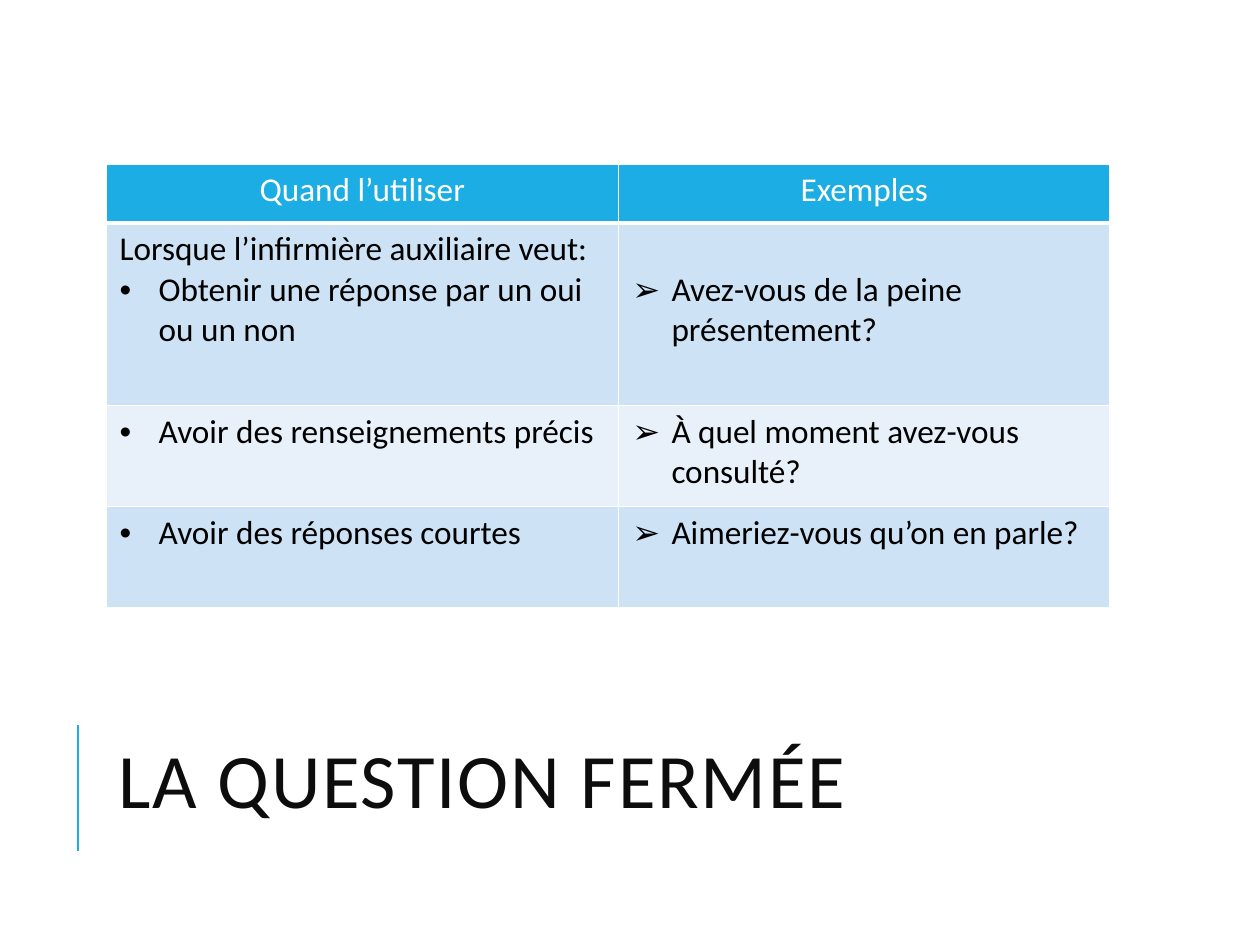
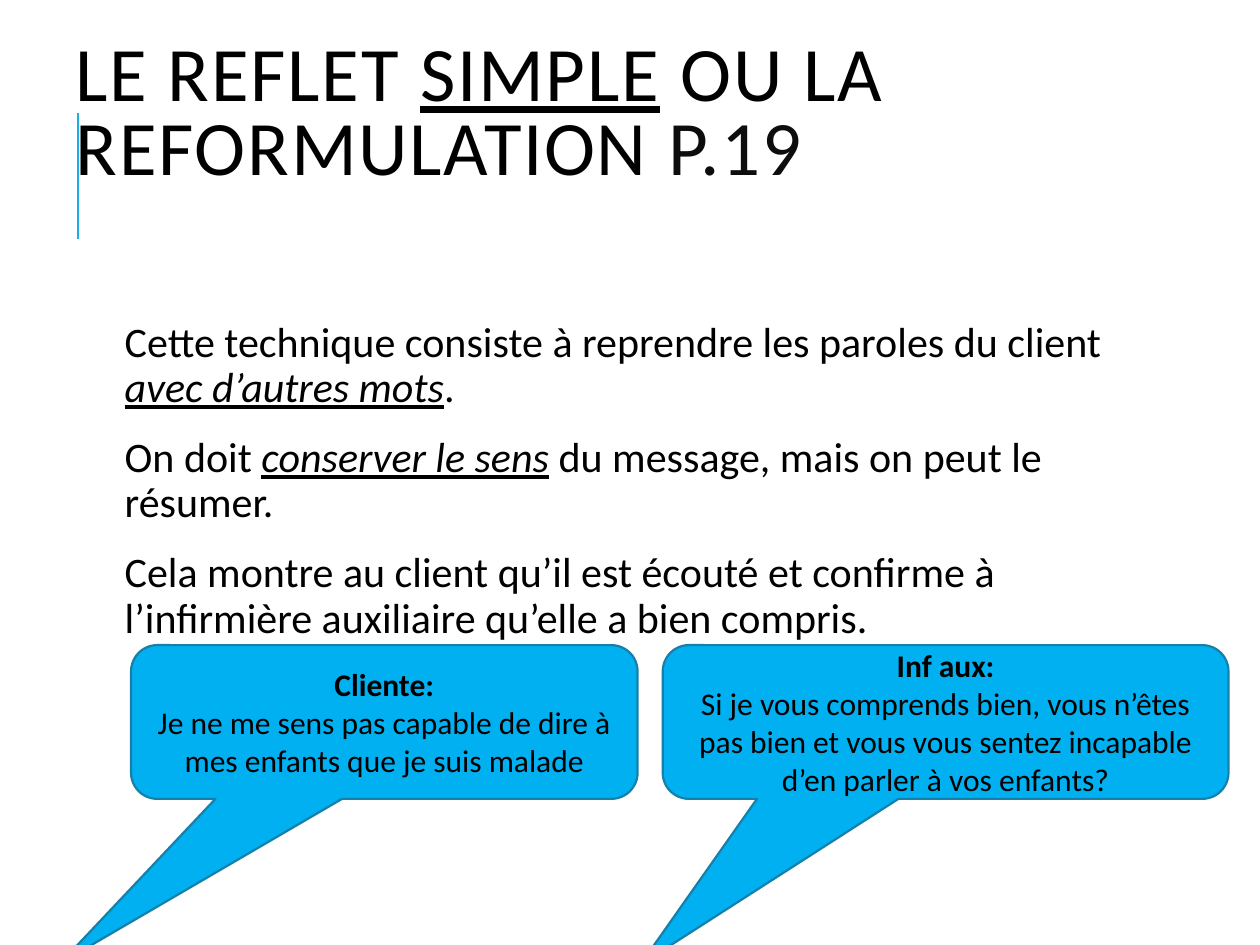
from lxml.etree import SubElement
from pptx import Presentation
from pptx.dml.color import RGBColor
from pptx.enum.shapes import MSO_CONNECTOR, MSO_SHAPE
from pptx.enum.text import MSO_ANCHOR, MSO_AUTO_SIZE, PP_ALIGN
from pptx.oxml.ns import qn
from pptx.util import Inches, Pt

COLORS = {
    "accent": "1CADE4", "title": "0D0D0D", "text": "000000", "white": "FFFFFF",
    "band_dark": "CDE3F5", "band_light": "E8F1FA",
    "bubble": "00B0F0", "bubble_edge": "1580A9",
}
FONT = "Calibri"
COLS, ROWS = 100, 75


def rgb(name):
    return RGBColor.from_string(COLORS[name])


class Deck:
    def __init__(self):
        self.prs = Presentation()
        self.prs.slide_width, self.prs.slide_height = Inches(10), Inches(7.5)
        self.s = None

    def x(self, cols):
        return round(self.prs.slide_width * cols / COLS)

    def y(self, rows):
        return round(self.prs.slide_height * rows / ROWS)

    def box(self, left, top, width, height):
        return self.x(left), self.y(top), self.x(width), self.y(height)

    def runs(self, p, parts, size, color="text", spacing=0):
        for text, marks, *own in parts:
            r = p.add_run()
            r.text = text
            f = r.font
            f.name, f.size = FONT, Pt(size)
            f.bold, f.italic, f.underline = (m in marks for m in "biu")
            f.color.rgb = rgb(own[0] if own else color)
            if spacing:
                r._r.get_or_add_rPr().set("spc", str(spacing))

    def paragraphs(self, tf, items):
        tf.word_wrap = True
        for i, parts in enumerate(items):
            p = tf.paragraphs[0] if i == 0 else tf.add_paragraph()
            yield p, parts

    def slide(self, parts, title_at, rail_top, color="text"):
        self.s = self.prs.slides.add_slide(self.prs.slide_layouts[5])
        self.rail(6.2, rail_top, 10)
        sp = self.s.shapes.title
        self.s.shapes._spTree.append(sp._element)
        sp.left, sp.top, sp.width, sp.height = self.box(*title_at)
        tf = sp.text_frame
        tf.word_wrap, tf.auto_size = True, MSO_AUTO_SIZE.NONE
        tf.vertical_anchor = MSO_ANCHOR.MIDDLE
        p = tf.paragraphs[0]
        p.alignment, p.line_spacing = PP_ALIGN.LEFT, 0.8
        self.runs(p, parts, 44, color, spacing=100)

    def rail(self, left, top, length):
        line = self.s.shapes.add_connector(
            MSO_CONNECTOR.STRAIGHT, self.x(left), self.y(top + length), self.x(left), self.y(top))
        line.line.color.rgb, line.line.width = rgb("accent"), Pt(1.5)
        SubElement(line._element.spPr, qn("a:effectLst"))

    def body(self, at, items):
        tf = self.s.shapes.add_textbox(*self.box(*at)).text_frame
        tf.margin_left = Inches(0.15)
        tf.margin_right = tf.margin_top = tf.margin_bottom = Inches(0.05)
        for p, parts in self.paragraphs(tf, items):
            p.line_spacing, p.space_before, p.space_after = 0.9, Pt(12), Pt(2)
            self.runs(p, parts, 24)

    def callout(self, at, tip, speaker, words):
        sp = self.s.shapes.add_shape(MSO_SHAPE.ROUNDED_RECTANGULAR_CALLOUT, *self.box(*at))
        sp.shadow.inherit = False
        sp.fill.solid()
        sp.fill.fore_color.rgb = rgb("bubble")
        sp.line.color.rgb, sp.line.width = rgb("bubble_edge"), Pt(1.25)
        for i, value in enumerate((*tip, 0.17)):
            sp.adjustments[i] = value
        tf = sp.text_frame
        tf.vertical_anchor = MSO_ANCHOR.MIDDLE
        for p, parts in self.paragraphs(tf, [[(speaker, "b")], [(words, "")]]):
            p.alignment = PP_ALIGN.CENTER
            self.runs(p, parts, 18)

    def bullet(self, p, char):
        pPr = p._p.get_or_add_pPr()
        pPr.set("marL", str(Inches(0.31)))
        pPr.set("indent", str(-Inches(0.31)))
        SubElement(pPr, qn("a:buFont"), typeface="Arial")
        SubElement(pPr, qn("a:buChar"), char=char)

    def borders(self, cell, bottom):
        tcPr = cell._tc.get_or_add_tcPr()
        for side, width in zip("LRTB", (1, 1, 1, bottom)):
            ln = SubElement(tcPr, qn(f"a:ln{side}"), w=str(Pt(width)))
            fill = SubElement(ln, qn("a:solidFill"))
            SubElement(fill, qn("a:srgbClr"), val=COLORS["white"])

    def table(self, at, widths, heights, rows):
        table = self.s.shapes.add_table(len(rows), len(widths), *self.box(*at)).table
        for column, width in zip(table.columns, widths):
            column.width = self.x(width)
        for i, (row, height, texts) in enumerate(zip(table.rows, heights, rows)):
            row.height = self.y(height)
            band = "accent" if i == 0 else "band_dark" if i % 2 else "band_light"
            for cell, lines in zip(row.cells, texts):
                self.borders(cell, 1 if i else 3)
                cell.fill.solid()
                cell.fill.fore_color.rgb = rgb(band)
                cell.margin_left = cell.margin_right = Inches(0.11)
                cell.margin_top = cell.margin_bottom = Inches(0.05)
                for p, (char, text) in self.paragraphs(cell.text_frame, lines):
                    if char:
                        self.bullet(p, char)
                    if i == 0:
                        p.alignment = PP_ALIGN.CENTER
                    self.runs(p, [(text, "")], 19, "text" if i else "white")
        return table


def closed_question(deck):
    deck.slide([("LA QUESTION FERMÉE", "")], (8.4, 54.2, 79.7, 16.4), 57.5, "title")
    dot, arrow = "•", "➢"
    table = deck.table((8.4, 13, 79.7, 35.2), (40.7, 39), (4.7, 14.5, 8, 8), [
        ([("", "Quand l’utiliser")], [("", "Exemples")]),
        ([("", "Lorsque l’infirmière auxiliaire veut:"),
          (dot, "Obtenir une réponse par un oui ou un non")],
         [(arrow, "Avez-vous de la peine présentement?")]),
        ([(dot, "Avoir des renseignements précis")],
         [(arrow, "À quel moment avez-vous consulté?")]),
        ([(dot, "Avoir des réponses courtes")],
         [(arrow, "Aimeriez-vous qu’on en parle?")]),
    ])
    table.cell(1, 1).margin_top = Inches(0.37)


def simple_reflection(deck):
    deck.slide([("LE REFLET ", ""), ("SIMPLE", "u"), (" OU LA REFORMULATION ", ""),
                ("P.19", "", "title")], (5, 3, 90.7, 12.5), 9)
    deck.body((8.4, 25, 79.7, 44), [
        [("Cette technique consiste à reprendre les paroles du client ", ""),
         ("avec d’autres mots", "iu"), (".", "")],
        [("On doit ", ""), ("conserver le sens", "iu"),
         (" du message, mais on peut le résumer.", "")],
        [("Cela montre au client qu’il est écouté et confirme à l’infirmière auxiliaire "
          "qu’elle a bien compris.", "")],
    ])
    deck.callout((10.4, 51.2, 40.2, 12.2), (-0.64, 1.57), "Cliente:",
                 "Je ne me sens pas capable de dire à mes enfants que je suis malade")
    deck.callout((52.6, 51.2, 44.9, 12.2), (-0.54, 1.58), "Inf aux:",
                 "Si je vous comprends bien, vous n’êtes pas bien et vous vous sentez "
                 "incapable d’en parler à vos enfants?")


def main():
    deck = Deck()
    closed_question(deck)
    simple_reflection(deck)
    deck.prs.save("out.pptx")


if __name__ == "__main__":
    main()
